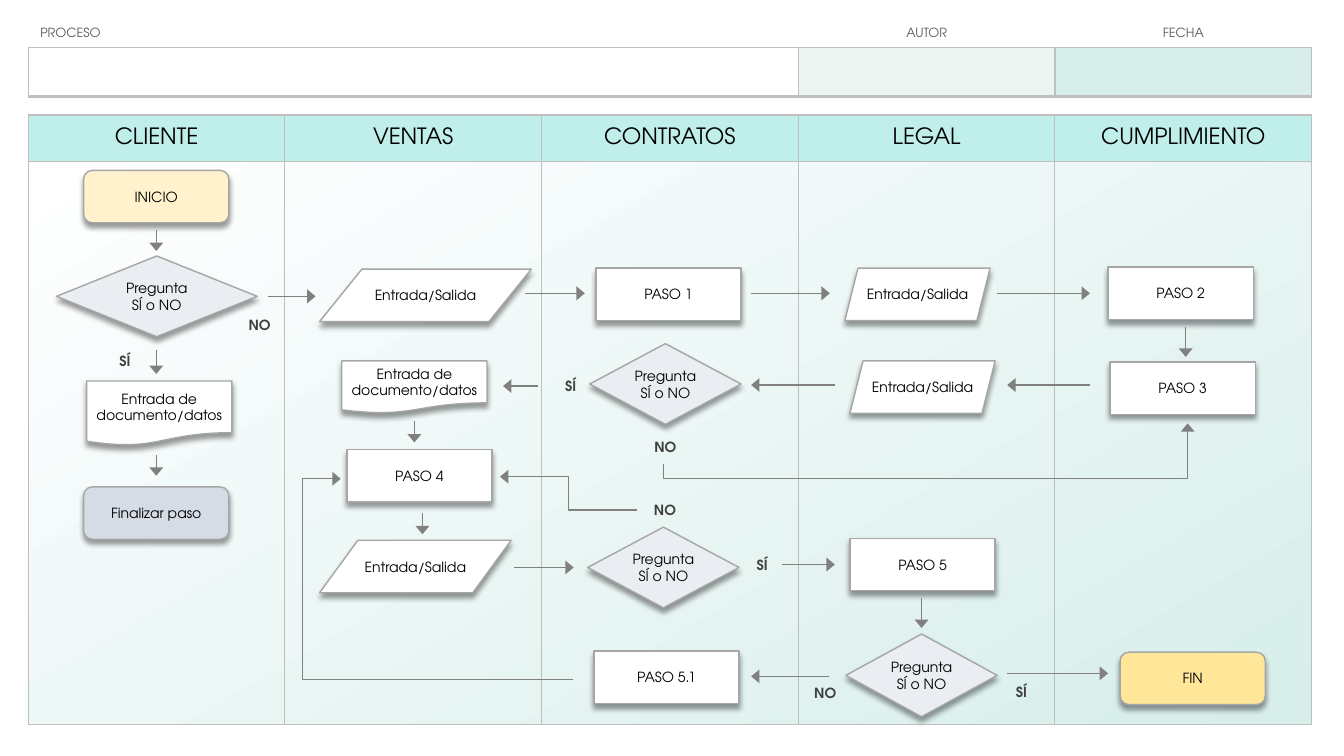
from dataclasses import dataclass

from lxml import etree
from pptx import Presentation
from pptx.dml.color import RGBColor
from pptx.enum.shapes import MSO_CONNECTOR, MSO_SHAPE
from pptx.enum.text import MSO_ANCHOR, PP_ALIGN
from pptx.oxml.ns import qn
from pptx.util import Inches, Pt

STEP = MSO_SHAPE.FLOWCHART_PROCESS
TERMINAL = MSO_SHAPE.FLOWCHART_ALTERNATE_PROCESS
ROUNDED = MSO_SHAPE.ROUNDED_RECTANGLE
DATA = MSO_SHAPE.FLOWCHART_DATA
SLANTED = MSO_SHAPE.PARALLELOGRAM
DOCUMENT = MSO_SHAPE.FLOWCHART_DOCUMENT
DECISION = MSO_SHAPE.FLOWCHART_DECISION
RECTANGLE = MSO_SHAPE.RECTANGLE
STRAIGHT, ELBOW = MSO_CONNECTOR.STRAIGHT, MSO_CONNECTOR.ELBOW
CENTER, LEFT = PP_ALIGN.CENTER, PP_ALIGN.LEFT
MIDDLE = MSO_ANCHOR.MIDDLE
PLAIN_TABLE = "{2D5ABB26-0587-4C30-8999-92F81FD0307C}"


@dataclass(frozen=True)
class Theme:
    font: str = "TeX Gyre Adventor"
    heading_size: float = 16
    body_size: float = 10
    caption_size: float = 9
    black: str = "000000"
    caption: str = "595959"
    answer: str = "404040"
    white: str = "FFFFFF"
    border: str = "BFBFBF"
    outline: str = "A6A6A6"
    arrow: str = "808080"
    header: str = "BFEEEB"
    mint: str = "D7EEEB"
    pale_mint: str = "EDF5F3"
    start: str = "FFF2CC"
    finish: str = "FFE699"
    closing: str = "D6DCE5"
    question: str = "EAEEF3"


THEME = Theme()


@dataclass(frozen=True)
class Node:
    kind: int
    left: float
    top: float
    text: str
    fill: str = THEME.white
    width: float = 1.44
    height: float = 0.52


@dataclass(frozen=True)
class Answer:
    text: str
    left: float
    top: float
    width: float
    height: float = 0.27


@dataclass(frozen=True)
class Question:
    left: float
    top: float
    yes: Answer
    no: Answer
    width: float = 1.5
    height: float = 0.8


@dataclass(frozen=True)
class Bend:
    start: tuple[float, float]
    end: tuple[float, float]
    turn: float
    vertical: bool = False


IO_TEXT = "Entrada/Salida"
DOCUMENT_TEXT = "Entrada de\ndocumento/datos"
QUESTION_TEXT = "Pregunta\nSÍ o NO"
LANES = ["CLIENTE", "VENTAS", "CONTRATOS", "LEGAL", "CUMPLIMIENTO"]
LEFT_EDGE, FULL_WIDTH = 0.28, 12.73
LANE_WIDTH = FULL_WIDTH / len(LANES)
FORM = [("PROCESO", 3, THEME.white, LEFT, 0.12),
        ("AUTOR", 1, THEME.pale_mint, CENTER, 0.01),
        ("FECHA", 1, THEME.mint, CENTER, 0.01)]

NODES = [
    Node(TERMINAL, 0.83, 1.69, "INICIO", THEME.start),
    Node(DOCUMENT, 0.86, 3.78, DOCUMENT_TEXT, height=0.64),
    Node(TERMINAL, 0.83, 4.83, "Finalizar paso", THEME.closing),
    Node(DATA, 3.17, 2.67, IO_TEXT, width=2.1),
    Node(DOCUMENT, 3.39, 3.58, DOCUMENT_TEXT),
    Node(STEP, 3.44, 4.46, "PASO 4"),
    Node(DATA, 3.17, 5.36, IO_TEXT, width=1.9),
    Node(STEP, 5.91, 2.66, "PASO 1"),
    Node(STEP, 5.89, 6.46, "PASO 5.1"),
    Node(SLANTED, 8.38, 2.66, IO_TEXT),
    Node(SLANTED, 8.43, 3.58, IO_TEXT),
    Node(STEP, 8.43, 5.34, "PASO 5"),
    Node(STEP, 10.99, 2.65, "PASO 2"),
    Node(STEP, 11.01, 3.59, "PASO 3"),
    Node(ROUNDED, 11.11, 6.47, "FIN", THEME.finish),
]
QUESTIONS = [
    Question(0.56, 2.54, Answer("SÍ", 0.95, 3.45, 0.58), Answer("NO", 2.3, 3.09, 0.55), width=1.99),
    Question(5.85, 3.41, Answer("SÍ", 5.47, 3.74, 0.38, 0.17), Answer("NO", 6.42, 4.35, 0.36, 0.17)),
    Question(5.83, 5.23, Answer("SÍ", 7.27, 5.47, 0.58), Answer("NO", 6.32, 4.92, 0.55)),
    Question(8.39, 6.29, Answer("SÍ", 9.84, 6.76, 0.58, 0.21), Answer("NO", 7.91, 6.77, 0.55, 0.21), height=0.82),
]
ACROSS = [(2.66, 3.13, 2.94), (5.21, 5.8, 2.91), (7.45, 8.23, 2.91), (9.89, 10.81, 2.91),
          (8.28, 7.45, 3.82), (10.81, 9.99, 3.82), (5.34, 4.99, 3.83), (7.76, 8.28, 5.6),
          (5.1, 5.69, 5.63), (8.22, 7.45, 6.71), (9.99, 10.99, 6.68)]
DOWN = [(1.55, 2.28, 2.49), (1.55, 3.47, 3.71), (1.55, 4.51, 4.72), (4.11, 4.18, 4.39),
        (4.19, 5.09, 5.3), (11.76, 3.24, 3.54), (9.14, 5.93, 6.23)]
BENDS = [Bend((6.58, 4.6), (11.78, 4.2), 4.75, vertical=True),
         Bend((6.32, 5.06), (4.96, 4.73), 5.64),
         Bend((5.68, 6.74), (3.38, 4.75), 3)]


def rgb(color: str) -> RGBColor:
    return RGBColor.from_string(color)


def child(parent, tag: str, **attributes):
    return etree.SubElement(parent, qn(tag), attributes)


def write(frame, text: str, size: float, color: str, bold: bool = False, align=CENTER) -> None:
    for index, line in enumerate(text.split("\n")):
        paragraph = frame.add_paragraph() if index else frame.paragraphs[0]
        paragraph.alignment = align
        run = paragraph.add_run()
        run.text = line
        run.font.name, run.font.size, run.font.bold = THEME.font, Pt(size), bold
        run.font.color.rgb = rgb(color)


def fit(frame) -> None:
    frame.word_wrap = True
    frame.vertical_anchor = MIDDLE
    frame.margin_left = frame.margin_right = frame.margin_top = frame.margin_bottom = Inches(0.02)


def box(part) -> list[int]:
    return [Inches(value) for value in (part.left, part.top, part.width, part.height)]


def draw_node(shapes, node: Node) -> None:
    shape = shapes.add_shape(node.kind, *box(node))
    shape.fill.solid()
    shape.fill.fore_color.rgb = rgb(node.fill)
    shape.line.color.rgb = rgb(THEME.outline)
    shape.line.width = Pt(1)
    effects = child(shape._element.spPr, "a:effectLst")
    shadow = child(effects, "a:outerShdw", blurRad=str(Pt(4)), dist=str(Pt(3)), dir="5400000", rotWithShape="0")
    child(child(shadow, "a:srgbClr", val=THEME.black), "a:alpha", val="40000")
    fit(shape.text_frame)
    write(shape.text_frame, node.text, THEME.body_size, THEME.black)


def draw_question(shapes, question: Question) -> None:
    group = shapes.add_group_shape().shapes
    draw_node(group, Node(DECISION, question.left, question.top, QUESTION_TEXT,
                          THEME.question, question.width, question.height))
    for answer in (question.yes, question.no):
        frame = group.add_textbox(*box(answer)).text_frame
        fit(frame)
        write(frame, answer.text, THEME.body_size, THEME.answer, bold=True)


def draw_arrow(shapes, start: tuple[float, float], end: tuple[float, float], kind=STRAIGHT):
    arrow = shapes.add_connector(kind, *(Inches(value) for value in (*start, *end)))
    arrow.line.color.rgb = rgb(THEME.arrow)
    arrow.line.width = Pt(1)
    child(arrow.line._get_or_add_ln(), "a:tailEnd", type="triangle", w="lg", len="med")
    child(arrow._element.spPr, "a:effectLst")
    return arrow


def draw_bend(shapes, bend: Bend) -> None:
    (x1, y1), (x2, y2) = start, end = bend.start, bend.end
    first, last = (y1, y2) if bend.vertical else (x1, x2)
    if bend.vertical:
        middle_x, middle_y = (x1 + x2) / 2, (y1 + y2) / 2
        half_width, half_height = abs(y2 - y1) / 2, abs(x2 - x1) / 2
        start = (middle_x - half_width, middle_y - half_height)
        end = (middle_x + half_width, middle_y + half_height)
    properties = draw_arrow(shapes, start, end, ELBOW)._element.spPr
    if bend.vertical:
        properties.find(qn("a:xfrm")).set("rot", "16200000")
    guides = properties.find(qn("a:prstGeom")).get_or_add_avLst()
    share = round((bend.turn - first) / (last - first) * 100000)
    child(guides, "a:gd", name="adj1", fmla=f"val {share}")


def style_cell(cell, fill: str | None, borders: dict[str, float]) -> None:
    properties = cell._tc.get_or_add_tcPr()
    for side in "LRTB":
        if side in borders:
            line = child(properties, f"a:ln{side}", w=str(Pt(borders[side])))
            child(child(line, "a:solidFill"), "a:srgbClr", val=THEME.border)
    if fill:
        cell.fill.solid()
        cell.fill.fore_color.rgb = rgb(fill)
    else:
        cell.fill.background()
    cell.vertical_anchor = MIDDLE
    cell.margin_left = cell.margin_right = cell.margin_top = Inches(0.01)
    cell.margin_bottom = 0


def draw_table(shapes, top: float, widths: list[float], heights: list[float]):
    table = shapes.add_table(len(heights), len(widths), Inches(LEFT_EDGE), Inches(top),
                             Inches(FULL_WIDTH), Inches(sum(heights))).table
    table.first_row = table.horz_banding = False
    table._tbl.tblPr.find(qn("a:tableStyleId")).text = PLAIN_TABLE
    for column, width in zip(table.columns, widths):
        column.width = Inches(width)
    for row, height in zip(table.rows, heights):
        row.height = Inches(height)
    return table


def draw_lanes(shapes) -> None:
    backdrop = shapes.add_shape(RECTANGLE, Inches(LEFT_EDGE), Inches(1.6), Inches(FULL_WIDTH), Inches(5.58))
    backdrop.shadow.inherit = False
    backdrop.line.fill.background()
    backdrop.fill.gradient()
    backdrop.fill.gradient_angle = 300
    for stop, position, color in zip(backdrop.fill.gradient_stops, (0, 1), (THEME.white, THEME.mint)):
        stop.position = position
        stop.color.rgb = rgb(color)
    table = draw_table(shapes, 1.14, [LANE_WIDTH] * len(LANES), [0.46, 5.59])
    borders = dict.fromkeys("LRTB", 1)
    for column, lane in enumerate(LANES):
        style_cell(table.cell(0, column), THEME.header, borders)
        write(table.cell(0, column).text_frame, lane, THEME.heading_size, THEME.black)
        style_cell(table.cell(1, column), None, borders)


def draw_form(shapes) -> None:
    table = draw_table(shapes, 0.19, [span * LANE_WIDTH for _, span, *_ in FORM], [0.28, 0.49])
    for column, (caption, _, fill, align, indent) in enumerate(FORM):
        heading = table.cell(0, column)
        style_cell(heading, None, {"B": 1})
        heading.margin_left = Inches(indent)
        write(heading.text_frame, caption, THEME.caption_size, THEME.caption, align=align)
        style_cell(table.cell(1, column), fill, {"L": 1, "R": 1, "T": 1, "B": 2.25})


def main() -> None:
    presentation = Presentation()
    presentation.slide_width, presentation.slide_height = Inches(13.33), Inches(7.5)
    shapes = presentation.slides.add_slide(presentation.slide_layouts[6]).shapes
    draw_lanes(shapes)
    draw_form(shapes)
    for node in NODES:
        draw_node(shapes, node)
    for question in QUESTIONS:
        draw_question(shapes, question)
    for x1, x2, y in ACROSS:
        draw_arrow(shapes, (x1, y), (x2, y))
    for x, y1, y2 in DOWN:
        draw_arrow(shapes, (x, y1), (x, y2))
    for bend in BENDS:
        draw_bend(shapes, bend)
    presentation.save("out.pptx")


if __name__ == "__main__":
    main()
